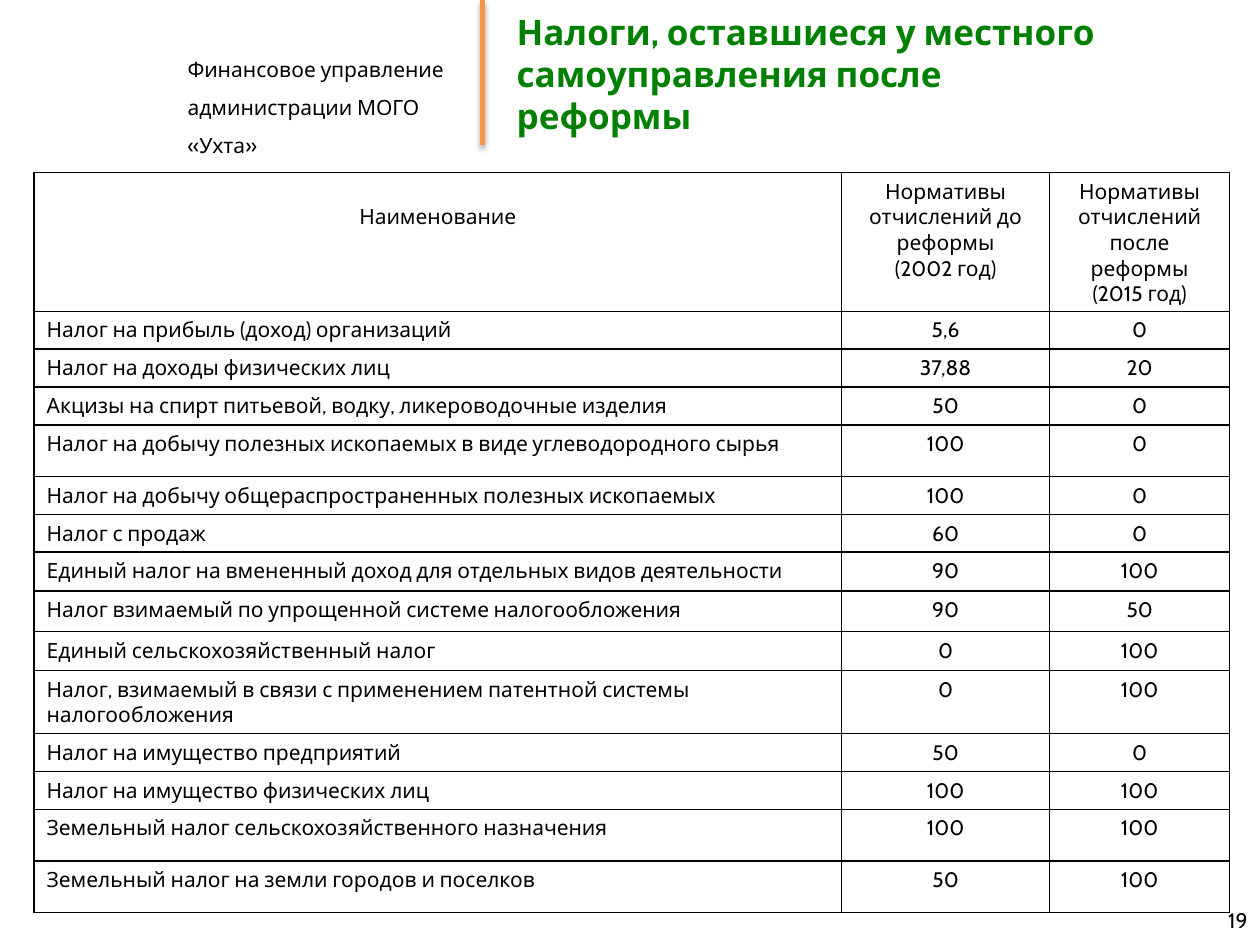
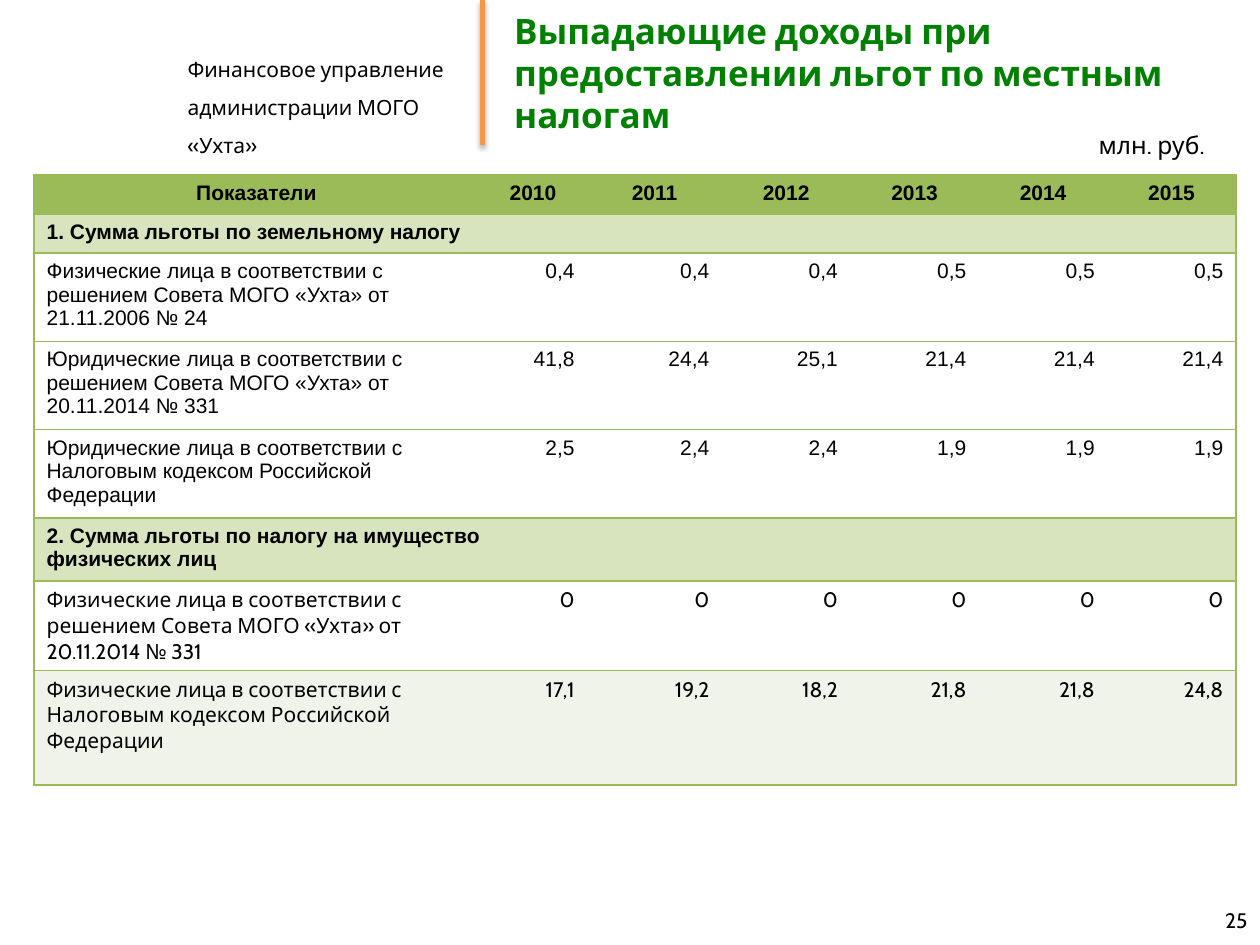
"""Build two slides on local taxes and tax reliefs of the Ukhta district."""
import lxml.etree
import pptx
import pptx.dml.color
import pptx.enum.shapes
import pptx.enum.text
import pptx.oxml.ns
import pptx.util

Inches = pptx.util.Inches
Pt = pptx.util.Pt
qn = pptx.oxml.ns.qn
ALIGN = pptx.enum.text.PP_ALIGN
ANCHOR = pptx.enum.text.MSO_ANCHOR

COLORS = {
    "text": "000000",
    "title": "008000",
    "divider": "F79646",
    "olive": "9BBB59",
    "section": "D7E4BD",
    "total": "EFF3EA",
}
MAIN_FONT = "Cabin"
TABLE_FONT = "Arial"
ALL_SIDES = "LRTB"

TAX_COLUMNS = [6.41, 1.65, 1.43]
TAX_HEADER = [
    ["Наименование"],
    ["Нормативы отчислений до реформы", "(2002 год)"],
    ["Нормативы отчислений после реформы", "(2015 год)"],
]
TAX_HEADER_HEIGHT = 1.1
TAX_RATES = [
    (0.3, "Налог на прибыль (доход) организаций", "5,6", "0"),
    (0.3, "Налог на доходы физических лиц", "37,88", "20"),
    (0.3, "Акцизы на спирт питьевой, водку, ликероводочные изделия", "50", "0"),
    (0.41, "Налог на добычу полезных ископаемых в виде углеводородного сырья", "100", "0"),
    (0.3, "Налог на добычу общераспространенных полезных ископаемых", "100", "0"),
    (0.3, "Налог с продаж", "60", "0"),
    (0.31, "Единый налог на вмененный доход для отдельных видов деятельности", "90", "100"),
    (0.32, "Налог взимаемый по упрощенной системе налогообложения", "90", "50"),
    (0.31, "Единый сельскохозяйственный налог", "0", "100"),
    (0.5, "Налог, взимаемый в связи с применением патентной системы налогообложения", "0", "100"),
    (0.3, "Налог на имущество предприятий", "50", "0"),
    (0.3, "Налог на имущество физических лиц", "100", "100"),
    (0.41, "Земельный налог сельскохозяйственного назначения", "100", "100"),
    (0.41, "Земельный налог на земли городов и поселков", "50", "100"),
]

RELIEF_COLUMNS = [3.53, 0.86, 1.07, 1.02, 1.02, 1.02, 1.02]
RELIEF_ROWS = [
    (0.31, "header", ["Показатели"], "2010 2011 2012 2013 2014 2015"),
    (0.31, "section", ["1. Сумма льготы по земельному налогу"], ""),
    (0.66, "land", ["Физические лица в соответствии с решением Совета МОГО «Ухта» от 21.11.2006 № 24"],
     "0,4 0,4 0,4 0,5 0,5 0,5"),
    (0.66, "land", ["Юридические лица в соответствии с решением Совета МОГО «Ухта» от 20.11.2014 № 331"],
     "41,8 24,4 25,1 21,4 21,4 21,4"),
    (0.66, "land", ["Юридические лица в соответствии с Налоговым кодексом Российской Федерации"],
     "2,5 2,4 2,4 1,9 1,9 1,9"),
    (0.48, "section", ["2. Сумма льготы по налогу на имущество", "физических лиц"], ""),
    (0.71, "property", ["Физические лица в соответствии с решением Совета МОГО «Ухта» от 20.11.2014 № 331"],
     "0 0 0 0 0 0"),
    (0.91, "total", ["Физические лица в соответствии с Налоговым кодексом Российской Федерации"],
     "17,1 19,2 18,2 21,8 21,8 24,8"),
]
RELIEF_STYLES = {
    "header": (TABLE_FONT, True, "olive"),
    "section": (TABLE_FONT, True, "section"),
    "land": (TABLE_FONT, False, None),
    "property": (MAIN_FONT, False, None),
    "total": (MAIN_FONT, False, "total"),
}


def rgb(color):
    return pptx.dml.color.RGBColor.from_string(COLORS[color])


def write(frame, lines, size=12, font=MAIN_FONT, color="text", bold=False,
          align=ALIGN.LEFT, spacing=None):
    for index, line in enumerate(lines):
        paragraph = frame.add_paragraph() if index else frame.paragraphs[0]
        paragraph.alignment = align
        paragraph.line_spacing = spacing
        run = paragraph.add_run()
        run.text = line
        run.font.size = Pt(size)
        run.font.name = font
        run.font.bold = bold
        run.font.color.rgb = rgb(color)


def add_label(slide, box, lines, anchor=ANCHOR.TOP, **style):
    frame = slide.shapes.add_textbox(*map(Inches, box)).text_frame
    frame.word_wrap = True
    frame.vertical_anchor = anchor
    write(frame, lines, **style)


def add_title(slide, box, text):
    title = slide.shapes.title
    title.left, title.top, title.width, title.height = map(Inches, box)
    frame = title.text_frame
    frame.auto_size = pptx.enum.text.MSO_AUTO_SIZE.NONE
    frame.vertical_anchor = ANCHOR.MIDDLE
    write(frame, [text], size=20, color="title", bold=True)


def add_divider(slide):
    divider = slide.shapes.add_connector(
        pptx.enum.shapes.MSO_CONNECTOR.STRAIGHT,
        Inches(3.83), Inches(0), Inches(3.83), Inches(1.15))
    divider.line.color.rgb = rgb("divider")
    divider.line.width = Pt(3)
    effects = lxml.etree.SubElement(divider._element.spPr, qn("a:effectLst"))
    shadow = lxml.etree.SubElement(
        effects, qn("a:outerShdw"), blurRad=str(Pt(3.1)), dist=str(Pt(1.8)),
        dir="5400000", rotWithShape="0")
    shade = lxml.etree.SubElement(shadow, qn("a:srgbClr"), val=COLORS["text"])
    lxml.etree.SubElement(shade, qn("a:alpha"), val="35000")


def add_report_slide(deck, title_box, title, page):
    slide = deck.slides.add_slide(deck.slide_layouts.get_by_name("Title Only"))
    add_label(slide, (1.39, 0.3, 2.5, 0.96),
              ["Финансовое управление", "администрации МОГО «Ухта»"], spacing=1.5)
    add_divider(slide)
    add_title(slide, title_box, title)
    add_label(slide, (7.67, 7.1, 2.33, 0.4), [page], anchor=ANCHOR.MIDDLE, align=ALIGN.RIGHT)
    return slide


def add_grid(slide, left, top, widths, heights):
    table = slide.shapes.add_table(
        len(heights), len(widths), Inches(left), Inches(top),
        Inches(sum(widths)), Inches(sum(heights))).table
    table.first_row = table.horz_banding = False
    for column, width in zip(table.columns, widths):
        column.width = Inches(width)
    for row, height in zip(table.rows, heights):
        row.height = Inches(height)
    return table


def paint_cell(cell, border, sides=ALL_SIDES, fill=None):
    properties = cell._tc.get_or_add_tcPr()
    for side in ALL_SIDES:
        line = lxml.etree.SubElement(properties, qn(f"a:ln{side}"), w=str(Pt(1)))
        if side in sides:
            solid = lxml.etree.SubElement(line, qn("a:solidFill"))
            lxml.etree.SubElement(solid, qn("a:srgbClr"), val=COLORS[border])
        else:
            lxml.etree.SubElement(line, qn("a:noFill"))
    if fill:
        cell.fill.solid()
        cell.fill.fore_color.rgb = rgb(fill)
    else:
        cell.fill.background()


def add_tax_table(slide):
    heights = [TAX_HEADER_HEIGHT] + [height for height, *_ in TAX_RATES]
    table = add_grid(slide, 0.27, 1.37, TAX_COLUMNS, heights)
    rows = [TAX_HEADER] + [[[text] for text in texts] for _, *texts in TAX_RATES]
    for row_index, row in enumerate(rows):
        for column_index, lines in enumerate(row):
            cell = table.cell(row_index, column_index)
            is_tax_name = row_index > 0 and column_index == 0
            write(cell.text_frame, lines, align=ALIGN.LEFT if is_tax_name else ALIGN.CENTER)
            paint_cell(cell, "text")
    table.cell(0, 0).margin_top = Inches(0.25)


def add_relief_table(slide):
    table = add_grid(slide, 0.27, 1.39, RELIEF_COLUMNS, [row[0] for row in RELIEF_ROWS])
    last = len(RELIEF_COLUMNS) - 1
    for row_index, (_, kind, name, values) in enumerate(RELIEF_ROWS):
        font, bold, fill = RELIEF_STYLES[kind]
        name_align = ALIGN.CENTER if kind == "header" else ALIGN.LEFT
        value_align = ALIGN.CENTER if kind == "header" else ALIGN.RIGHT
        if kind == "section":
            table.cell(row_index, 0).merge(table.cell(row_index, last))
        for column_index in range(last + 1):
            sides = "TB" + "L" * (column_index == 0)
            sides += "R" * (column_index == last or kind == "section")
            paint_cell(table.cell(row_index, column_index), "olive", sides, fill)
        write(table.cell(row_index, 0).text_frame, name, font=font, bold=bold, align=name_align)
        for column_index, value in enumerate(values.split(), 1):
            write(table.cell(row_index, column_index).text_frame, [value],
                  font=font, bold=bold, align=value_align)


def main():
    deck = pptx.Presentation()
    deck.slide_width, deck.slide_height = Inches(10), Inches(7.5)

    taxes = add_report_slide(deck, (4, 0.08, 4.88, 1.01),
                             "Налоги, оставшиеся у местного самоуправления после реформы", "19")
    add_tax_table(taxes)

    reliefs = add_report_slide(deck, (3.98, 0, 6.02, 1.15),
                               "Выпадающие доходы при предоставлении льгот по местным налогам", "25")
    add_relief_table(reliefs)
    add_label(reliefs, (8.62, 0.98, 1.18, 0.34), ["млн. руб."], size=14)

    deck.save("out.pptx")


if __name__ == "__main__":
    main()
